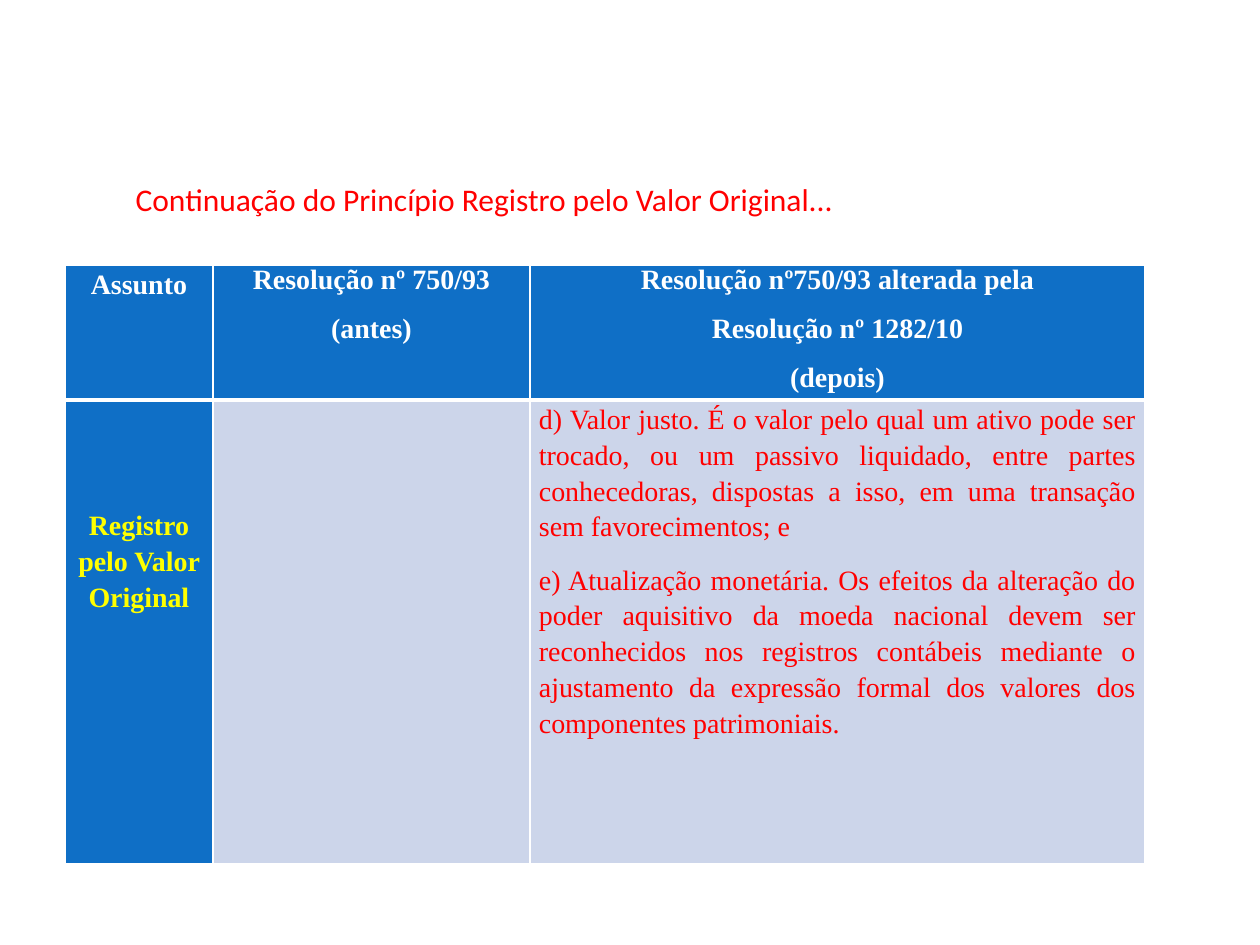
from lxml import etree
from pptx import Presentation
from pptx.dml.color import RGBColor
from pptx.enum.text import MSO_ANCHOR, MSO_AUTO_SIZE, PP_ALIGN
from pptx.oxml.ns import qn
from pptx.util import Emu, Pt

LEFT, MID, JUST = PP_ALIGN.LEFT, PP_ALIGN.CENTER, PP_ALIGN.JUSTIFY
TOP, NO_FIT = MSO_ANCHOR.TOP, MSO_AUTO_SIZE.NONE
BLUE, PALE, WHITE = "0F6FC6", "CCD5EA", "FFFFFF"
RED, YELLOW = "FF0000", "FFFF00"
PAD = 9

HEADS = [
    (["Assunto"], 1.15),
    (["Resolução nº 750/93", "(antes)"], 1.0),
    (["Resolução nº750/93 alterada pela", "Resolução nº 1282/10", "(depois)"], 1.0),
]
TOPIC = ["Registro pelo Valor Original"]
AFTER = [
    "d) Valor justo. É o valor pelo qual um ativo pode ser trocado, ou um "
    "passivo liquidado, entre partes conhecedoras, dispostas a isso, em uma "
    "transação sem favorecimentos; e",
    "e) Atualização monetária. Os efeitos da alteração do poder aquisitivo da "
    "moeda nacional devem ser reconhecidos nos registros contábeis mediante o "
    "ajustamento da expressão formal dos valores dos componentes patrimoniais.",
]


def px(n):
    return Emu(round(n * 914400 / 126))


def rgb(code):
    return RGBColor.from_string(code)


def style(par, face, size, color, bold, align):
    par.alignment = align
    font = par.font
    font.name, font.size, font.bold = face, Pt(size), bold
    font.color.rgb = rgb(color)


def edge(cell, base):
    """White cell borders; base is the width of the bottom one in points."""
    props = cell._tc.get_or_add_tcPr()
    widths = {"a:lnL": 1, "a:lnR": 1, "a:lnT": 1, "a:lnB": base}
    for spot, (tag, width) in enumerate(widths.items()):
        line = etree.Element(qn(tag), w=str(Pt(width)))
        fill = etree.SubElement(line, qn("a:solidFill"))
        etree.SubElement(fill, qn("a:srgbClr"), val=WHITE)
        props.insert(spot, line)


def fill_cell(cell, back, lines=(), color=WHITE, bold=True, align=MID,
              lead=1.15, drop=0, base=1):
    cell.fill.solid()
    cell.fill.fore_color.rgb = rgb(back)
    edge(cell, base)
    cell.margin_left = cell.margin_right = px(PAD)
    cell.margin_top, cell.margin_bottom = px(drop), 0
    frame = cell.text_frame
    for i, line in enumerate(lines):
        par = frame.add_paragraph() if i else frame.paragraphs[0]
        par.text = line
        par.line_spacing, par.space_after = lead, Pt(10)
        style(par, "Times New Roman", 16, color, bold, align)


def add_title(slide, x, y, w, h):
    title = slide.shapes.title
    title.left, title.top, title.width, title.height = map(px, (x, y, w, h))
    frame = title.text_frame
    frame.word_wrap, frame.auto_size = True, NO_FIT
    frame.vertical_anchor = TOP
    frame.text = "Continuação do Princípio Registro pelo Valor Original..."
    par = frame.paragraphs[0]
    par.line_spacing = 1.0
    style(par, "Calibri", 18, RED, False, LEFT)


def add_grid(slide, x, y, cols, rows):
    box = map(px, (x, y, sum(cols), sum(rows)))
    table = slide.shapes.add_table(len(rows), len(cols), *box).table
    for col, width in zip(table.columns, cols):
        col.width = px(width)
    for row, height in zip(table.rows, rows):
        row.height = px(height)
    # Header row
    for i, (lines, lead) in enumerate(HEADS):
        fill_cell(table.cell(0, i), BLUE, lines, lead=lead, base=3)
    # Body row
    fill_cell(table.cell(1, 0), BLUE, TOPIC, YELLOW, drop=106)
    fill_cell(table.cell(1, 1), PALE)
    fill_cell(table.cell(1, 2), PALE, AFTER, RED, bold=False, align=JUST)


def main():
    deck = Presentation()
    deck.slide_width, deck.slide_height = px(1260), px(945)
    slide = deck.slides.add_slide(deck.slide_layouts[5])
    add_title(slide, 123, 174, 833, 50)
    add_grid(slide, 65, 265, [148, 317, 615], [135, 464])
    deck.save("out.pptx")


if __name__ == "__main__":
    main()
